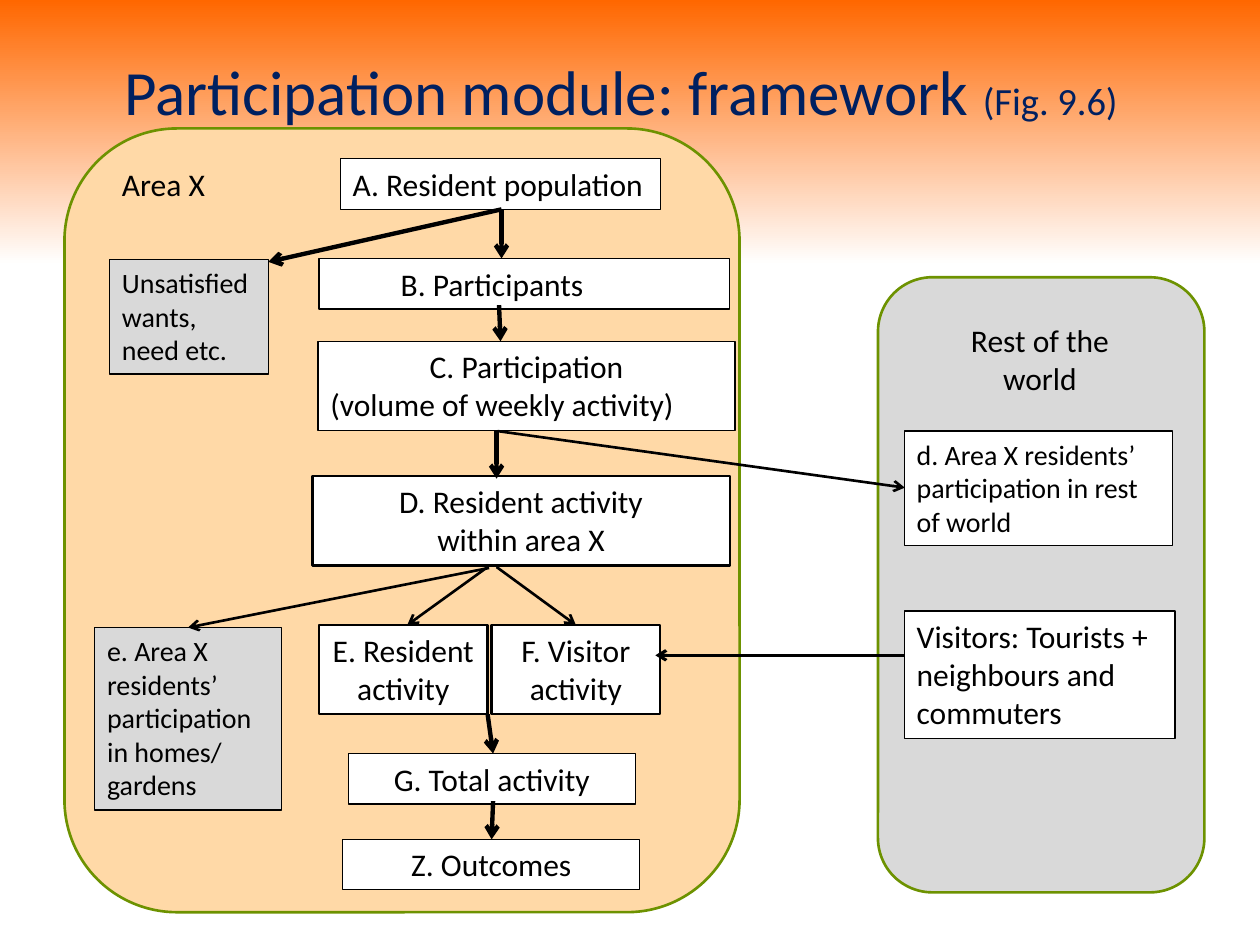
from lxml.etree import SubElement
from pptx import Presentation
from pptx.dml.color import RGBColor
from pptx.enum.shapes import MSO_CONNECTOR as Link, MSO_SHAPE as Preset
from pptx.enum.text import MSO_ANCHOR as Anchor, PP_ALIGN as Align
from pptx.oxml.ns import qn
from pptx.util import Cm, Pt

BLACK = RGBColor(0x00, 0x00, 0x00)
WHITE = RGBColor(0xFF, 0xFF, 0xFF)
GREY = RGBColor(0xD9, 0xD9, 0xD9)
PEACH = RGBColor(0xFF, 0xD9, 0xA7)
GREEN = RGBColor(0x6D, 0x92, 0x00)
NAVY = RGBColor(0x00, 0x20, 0x60)
ORANGE = RGBColor(0xFF, 0x67, 0x00)

BODY = {"name": "Calibri", "size": Pt(18)}
SMALL = {"name": "Calibri", "size": Pt(16)}
HEADING = {"name": "Calibri", "size": Pt(36)}
FIGURE_REF = {"name": "Calibri", "size": Pt(22)}
LEFT, CENTER = Align.LEFT, Align.CENTER

AREA_X = (1.3, 2.59, 13.61, 15.8)
REST_OF_WORLD = (17.7, 5.59, 6.58, 12.4)
TITLE = (1.09, 0.74, 22.86, 2.16)


def style(target, values):
    for key, value in values.items():
        setattr(target, key, value)


def paint(shape, fill, outline, weight):
    shape.shadow.inherit = False
    shape.fill.solid()
    shape.fill.fore_color.rgb = fill
    shape.line.color.rgb = outline
    shape.line.width = Pt(weight)


def write(run, words, font, color):
    run.text = words
    style(run.font, font)
    run.font.color.rgb = color


def fill_text(frame, lines, aligns, font, right=0.25):
    style(frame, {"word_wrap": True, "vertical_anchor": Anchor.TOP,
                  "margin_right": Cm(right)})
    for index, (words, align) in enumerate(zip(lines, aligns)):
        paragraph = frame.paragraphs[0] if index == 0 else frame.add_paragraph()
        paragraph.alignment = align
        write(paragraph.add_run(), words, font, BLACK)


def add_panel(slide, box, fill):
    panel = slide.shapes.add_shape(Preset.ROUNDED_RECTANGLE, *map(Cm, box))
    paint(panel, fill, GREEN, 1.5)


def add_label(slide, origin, place, words, align):
    x, y, w, h = place
    label = slide.shapes.add_textbox(
        Cm(origin[0] + x), Cm(origin[1] + y), Cm(w), Cm(h))
    fill_text(label.text_frame, [words], [align], BODY)


def add_step(slide, origin, place, lines, aligns=(CENTER, CENTER), font=BODY,
             fill=WHITE, weight=0.75, right=0.25):
    x, y, w, h = place
    step = slide.shapes.add_shape(
        Preset.RECTANGLE, Cm(origin[0] + x), Cm(origin[1] + y), Cm(w), Cm(h))
    paint(step, fill, BLACK, weight)
    fill_text(step.text_frame, lines, aligns, font, right)


def add_arrow(slide, origin, start, end, weight):
    ends = [Cm(origin[axis] + point[axis]) for point in (start, end) for axis in (0, 1)]
    arrow = slide.shapes.add_connector(Link.STRAIGHT, *ends)
    arrow.line.color.rgb = BLACK
    arrow.line.width = Pt(weight)
    SubElement(arrow.line._get_or_add_ln(), qn("a:tailEnd"), type="arrow")
    SubElement(arrow._element.spPr, qn("a:effectLst"))


def build_background(slide):
    fill = slide.background.fill
    fill.gradient()
    fill.gradient_angle = 270
    for stop, color, position in zip(fill.gradient_stops, (ORANGE, WHITE), (0, 0.28)):
        stop.color.rgb = color
        stop.position = position


def build_title(slide, box):
    title = slide.shapes.title
    style(title, dict(zip(("left", "top", "width", "height"), map(Cm, box))))
    title.text_frame.vertical_anchor = Anchor.MIDDLE
    paragraph = title.text_frame.paragraphs[0]
    paragraph.alignment = CENTER
    write(paragraph.add_run(), "Participation module: framework ", HEADING, NAVY)
    write(paragraph.add_run(), "(Fig. 9.6)", FIGURE_REF, NAVY)


def build_area_x(slide, box):
    add_panel(slide, box, PEACH)
    add_label(slide, box, (0.91, 0.61, 2.79, 1.02), "Area X", LEFT)
    side_note = {"aligns": [LEFT], "font": SMALL, "fill": GREY}
    steps = [
        ((5.56, 0.61, 6.45, 1.02), ["A. Resident population"], {"aligns": [LEFT]}),
        ((0.91, 2.64, 3.2, 2.31), ["Unsatisfied wants, need etc."], side_note),
        ((5.13, 2.62, 8.28, 1.02), ["B. Participants"], {"right": 1.55}),
        ((5.11, 4.29, 8.41, 1.8),
         ["C. Participation", "(volume of weekly activity)"],
         {"aligns": [CENTER, LEFT]}),
        ((5, 7.01, 8.41, 1.8), ["D. Resident activity", "within area X"],
         {"weight": 1.25}),
        ((5.13, 10.01, 3.4, 1.8), ["E. Resident activity"], {"weight": 1.25}),
        ((8.61, 10.01, 3.4, 1.8), ["F. Visitor activity"], {"weight": 1.25}),
        ((0.61, 10.06, 3.76, 3.68),
         ["e. Area X residents’ participation in homes/ gardens"], side_note),
        ((5.72, 12.6, 5.79, 1.02), ["G. Total activity"], {}),
        ((5.61, 14.33, 5.99, 1.02), ["Z. Outcomes"], {}),
    ]
    for place, lines, options in steps:
        add_step(slide, box, place, lines, **options)
    main_flow = [
        ((8.81, 1.63), (4.11, 2.69)),
        ((8.81, 1.63), (8.81, 2.62)),
        ((8.76, 3.56), (8.79, 4.29)),
        ((8.71, 6.1), (8.71, 7.06)),
        ((8.53, 11.81), (8.64, 12.6)),
        ((8.64, 13.56), (8.61, 14.33)),
    ]
    activity_split = [
        ((8.56, 8.86), (2.49, 10.06)),
        ((8.53, 8.84), (6.91, 10.01)),
        ((8.71, 8.84), (10.31, 10.01)),
    ]
    for weight, flows in ((2.5, main_flow), (1.5, activity_split)):
        for start, end in flows:
            add_arrow(slide, box, start, end, weight)


def build_rest_of_world(slide, box):
    add_panel(slide, box, GREY)
    add_label(slide, box, (1.27, 0.76, 3.99, 1.8), "Rest of the world", CENTER)
    add_step(slide, box, (0.53, 3.1, 5.41, 2.31),
             ["d. Area X residents’ participation in rest of world"], [LEFT], SMALL)
    add_step(slide, box, (0.53, 6.73, 5.46, 2.57),
             ["Visitors: Tourists + neighbours and commuters"], [LEFT])


def build_exchanges(slide, origin):
    add_arrow(slide, origin, (8.73, 6.1), (16.94, 7.24), 1.5)
    add_arrow(slide, origin, (16.94, 10.62), (11.91, 10.62), 1.75)


def main():
    deck = Presentation()
    style(deck, {"slide_width": Cm(25.4), "slide_height": Cm(19.05)})
    slide = deck.slides.add_slide(deck.slide_layouts.get_by_name("Title Only"))
    build_background(slide)
    build_title(slide, TITLE)
    build_area_x(slide, AREA_X)
    build_rest_of_world(slide, REST_OF_WORLD)
    build_exchanges(slide, AREA_X)
    deck.save("out.pptx")


if __name__ == "__main__":
    main()
